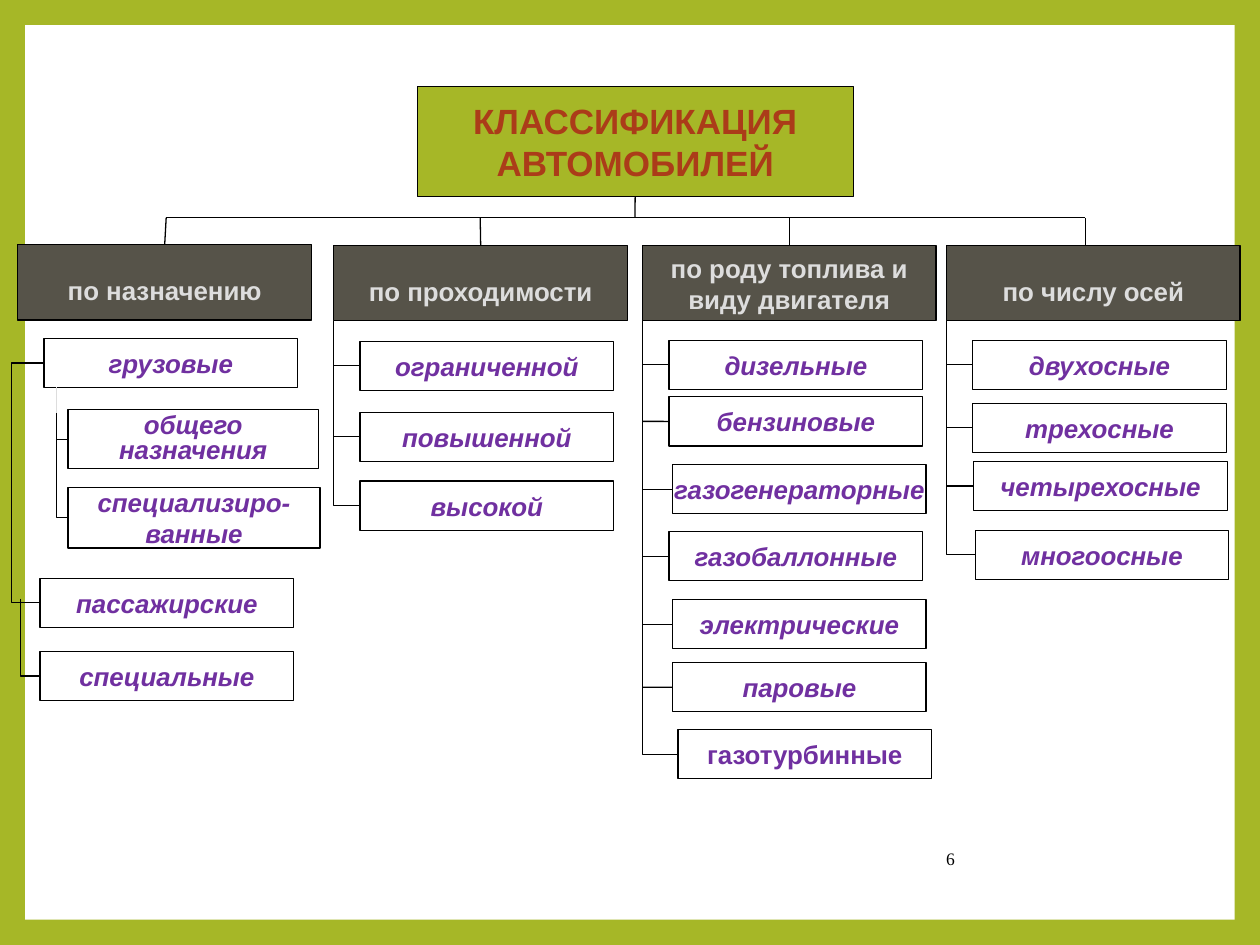
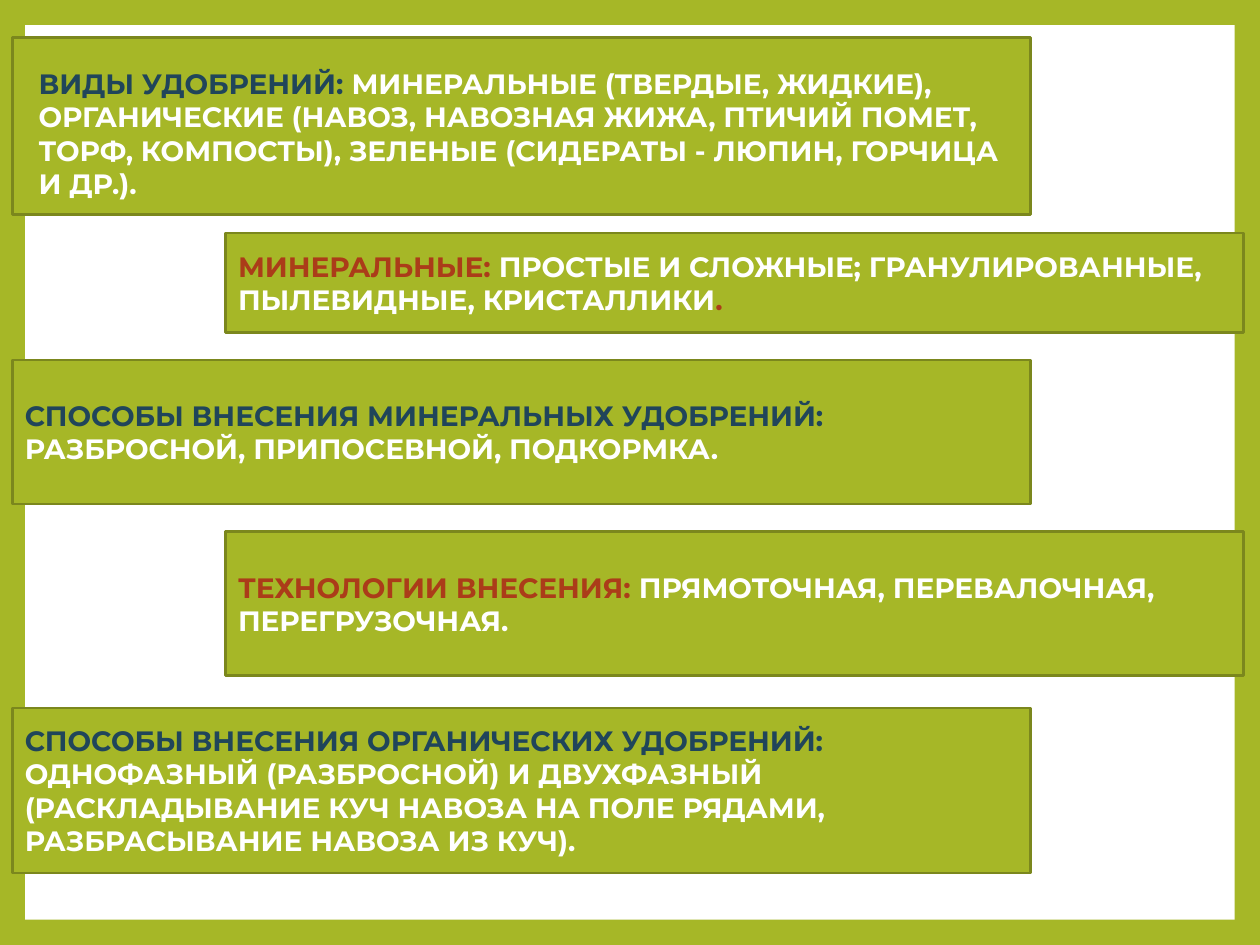
from dataclasses import dataclass
from typing import Optional

from lxml.etree import SubElement
from pptx import Presentation
from pptx.dml.color import RGBColor
from pptx.enum.shapes import MSO_CONNECTOR, MSO_SHAPE
from pptx.enum.text import MSO_ANCHOR, MSO_AUTO_SIZE, PP_ALIGN
from pptx.oxml.ns import qn
from pptx.util import Cm, Pt

COLORS = {
    "green": "A6B727",
    "olive": "7B871D",
    "white": "FFFFFF",
    "black": "000000",
    "rust": "AB3C19",
    "navy": "20455A",
    "purple": "7030A0",
    "gray": "565349",
    "light": "DDDDDD",
}
HEADING_WIDTH, HEADING_HEIGHT = 5.92, 1.52
ITEM_WIDTH, ITEM_HEIGHT = 5.11, 0.99
BUS_TOP = 4.39
BAND_WIDTH = 20.52
BAND_LEFT, BAND_RIGHT = 0.25, 4.55
INSET_SIDE, INSET_TOP = 0.25, 0.13


@dataclass(frozen=True)
class Item:
    text: str
    left: float
    top: float
    width: float = ITEM_WIDTH
    height: float = ITEM_HEIGHT
    italic: bool = True
    line_spacing: float = 1.0


@dataclass(frozen=True)
class Column:
    heading: str
    left: float
    top: float
    stem: float
    items: tuple[Item, ...]
    has_branches: bool = True
    inset_top: float = 0.3


@dataclass(frozen=True)
class Elbow:
    begin: tuple[float, float]
    end: tuple[float, float]
    turn: float


@dataclass(frozen=True)
class Band:
    left: float
    top: float
    height: float
    lead: str
    lead_color: str
    body: str
    tail: str = ""
    inset_left: float = INSET_SIDE
    inset_top: float = INSET_TOP


COLUMNS = (
    Column("по назначению", 0.36, 4.93, 3.35, (
        Item("грузовые", 0.89, 6.83),
        Item("общего назначения", 1.37, 8.26, 5.05, 1.19, line_spacing=0.8),
        Item("специализиро-ванные", 1.37, 9.83, 5.08, 1.22),
        Item("пассажирские", 0.81, 11.66),
        Item("специальные", 0.81, 13.13),
    ), has_branches=False),
    Column("по проходимости", 6.73, 4.95, 9.68, (
        Item("ограниченной", 7.26, 6.88),
        Item("повышенной", 7.26, 8.31),
        Item("высокой", 7.26, 9.7),
    )),
    Column("по роду топлива и виду двигателя", 12.95, 4.95, 15.91, (
        Item("дизельные", 13.49, 6.86),
        Item("бензиновые", 13.49, 8.0),
        Item("газогенераторные", 13.56, 9.37),
        Item("газобаллонные", 13.49, 10.72),
        Item("электрические", 13.56, 12.09),
        Item("паровые", 13.56, 13.36),
        Item("газотурбинные", 13.67, 14.71, italic=False),
    ), inset_top=0),
    Column("по числу осей", 19.08, 4.95, 21.88, (
        Item("двухосные", 19.61, 6.86),
        Item("трехосные", 19.61, 8.13),
        Item("четырехосные", 19.63, 9.3),
        Item("многоосные", 19.66, 10.69),
    )),
)
PURPOSE_ELBOWS = (
    Elbow((0.89, 7.32), (0.81, 12.14), 0.23),
    Elbow((0.41, 12.07), (0.81, 13.63), 0.41),
    Elbow((1.14, 8.79), (1.37, 10.44), 1.14),
    Elbow((1.14, 7.9), (1.37, 8.86), 1.14),
)
BANDS = (
    Band(BAND_LEFT, 0.76, 3.56, "ВИДЫ УДОБРЕНИЙ: ", "navy",
         "МИНЕРАЛЬНЫЕ (ТВЕРДЫЕ, ЖИДКИЕ), ОРГАНИЧЕСКИЕ (НАВОЗ, НАВОЗНАЯ ЖИЖА, "
         "ПТИЧИЙ ПОМЕТ, ТОРФ, КОМПОСТЫ), ЗЕЛЕНЫЕ (СИДЕРАТЫ - ЛЮПИН, ГОРЧИЦА И ДР.).",
         inset_left=0.53, inset_top=0.43),
    Band(BAND_RIGHT, 4.7, 2.01, "МИНЕРАЛЬНЫЕ: ", "rust",
         "ПРОСТЫЕ И СЛОЖНЫЕ; ГРАНУЛИРОВАННЫЕ, ПЫЛЕВИДНЫЕ, КРИСТАЛЛИКИ", "."),
    Band(BAND_LEFT, 7.26, 2.9, "СПОСОБЫ ВНЕСЕНИЯ МИНЕРАЛЬНЫХ УДОБРЕНИЙ: ", "navy",
         "РАЗБРОСНОЙ, ПРИПОСЕВНОЙ, ПОДКОРМКА."),
    Band(BAND_RIGHT, 10.72, 2.9, "ТЕХНОЛОГИИ ВНЕСЕНИЯ: ", "rust",
         "ПРЯМОТОЧНАЯ, ПЕРЕВАЛОЧНАЯ, ПЕРЕГРУЗОЧНАЯ."),
    Band(BAND_LEFT, 14.27, 3.33, "СПОСОБЫ ВНЕСЕНИЯ ОРГАНИЧЕСКИХ УДОБРЕНИЙ: ", "navy",
         "ОДНОФАЗНЫЙ (РАЗБРОСНОЙ) И ДВУХФАЗНЫЙ (РАСКЛАДЫВАНИЕ КУЧ НАВОЗА НА ПОЛЕ "
         "РЯДАМИ, РАЗБРАСЫВАНИЕ НАВОЗА ИЗ КУЧ)."),
)


def rgb(name: str) -> RGBColor:
    return RGBColor.from_string(COLORS[name])


def style_font(font, name: str, size: float, color: str, bold=True, italic=False) -> None:
    font.name, font.size, font.bold, font.italic = name, Pt(size), bold, italic
    font.color.rgb = rgb(color)


def style_box(shape, fill: Optional[str], line: Optional[str], line_width=0.75) -> None:
    if fill:
        shape.fill.solid()
        shape.fill.fore_color.rgb = rgb(fill)
    else:
        shape.fill.background()
    if line:
        shape.line.color.rgb = rgb(line)
        shape.line.width = Pt(line_width)
    else:
        shape.line.fill.background()


def add_box(slide, left, top, width, height, fill, line, line_width=0.75):
    shape = slide.shapes.add_shape(
        MSO_SHAPE.RECTANGLE, Cm(left), Cm(top), Cm(width), Cm(height))
    shape.shadow.inherit = False
    style_box(shape, fill, line, line_width)
    return shape


def set_frame(shape, left=0.0, top=0.0, right=0.0, bottom=0.0):
    frame = shape.text_frame
    frame.word_wrap = True
    frame.auto_size = MSO_AUTO_SIZE.NONE
    frame.vertical_anchor = MSO_ANCHOR.MIDDLE
    frame.margin_left, frame.margin_top = Cm(left), Cm(top)
    frame.margin_right, frame.margin_bottom = Cm(right), Cm(bottom)
    return frame


def set_label(shape, text, size, color, italic=False, inset_top=0.0):
    frame = set_frame(shape, top=inset_top)
    frame.text = text
    paragraph = frame.paragraphs[0]
    paragraph.alignment = PP_ALIGN.CENTER
    style_font(paragraph.runs[0].font, "Arial", size, color, italic=italic)
    return paragraph


def add_line(slide, begin, end, color="black", kind=MSO_CONNECTOR.STRAIGHT):
    connector = slide.shapes.add_connector(
        kind, Cm(begin[0]), Cm(begin[1]), Cm(end[0]), Cm(end[1]))
    connector.line.color.rgb = rgb(color)
    connector.line.width = Pt(0.75)
    SubElement(connector.element.spPr, qn("a:effectLst"))
    return connector


def add_elbow(slide, elbow: Elbow) -> None:
    connector = add_line(slide, elbow.begin, elbow.end, kind=MSO_CONNECTOR.ELBOW)
    # The vertical part stands at elbow.turn, given as a share of the width
    share = (elbow.turn - elbow.begin[0]) / (elbow.end[0] - elbow.begin[0])
    geometry = connector.element.spPr.find(qn("a:prstGeom"))
    guides = geometry.find(qn("a:avLst"))
    if guides is None:
        guides = SubElement(geometry, qn("a:avLst"))
    SubElement(guides, qn("a:gd"), name="adj1", fmla=f"val {round(share * 100000)}")


def set_master(presentation, slide) -> None:
    """Green frame and white panel shared by all slides."""
    master = presentation.slide_master
    master.background.fill.solid()
    master.background.fill.fore_color.rgb = rgb("green")
    panel = add_box(slide, 0.51, 0.51, 24.38, 18.03, "white", None)
    panel.element.nvSpPr.cNvPr.set("id", "100")
    master.shapes.element.insert(2, panel.element)


def add_column(slide, column: Column) -> None:
    heading = add_box(slide, column.left, column.top, HEADING_WIDTH, HEADING_HEIGHT,
                      "gray", "black")
    set_label(heading, column.heading, 14.8, "light", inset_top=column.inset_top)
    stem = add_line(slide, (column.stem, BUS_TOP), (column.stem, column.top))
    if abs(column.stem - column.left - HEADING_WIDTH / 2) < 0.1:
        stem.end_connect(heading, 0)

    for item in column.items:
        box = add_box(slide, item.left, item.top, item.width, item.height, None, "black")
        paragraph = set_label(box, item.text, 14.8, "purple", item.italic)
        paragraph.line_spacing = item.line_spacing
        if not column.has_branches:
            continue
        middle = item.top + item.height / 2
        if item is column.items[-1]:
            start = (column.left, column.top + HEADING_HEIGHT)
            add_elbow(slide, Elbow(start, (item.left, middle), column.left))
        else:
            branch = add_line(slide, (column.left, middle), (item.left, middle))
            branch.end_connect(box, 1)


def build_classification(slide) -> None:
    # Title
    title = slide.shapes.title
    title.left, title.top, title.width, title.height = Cm(8.41), Cm(1.75), Cm(8.79), Cm(2.21)
    style_box(title, "green", "black")
    set_label(title, "КЛАССИФИКАЦИЯ АВТОМОБИЛЕЙ", 20, "rust")

    # Tree
    for column in COLUMNS:
        add_column(slide, column)
    for elbow in PURPOSE_ELBOWS:
        add_elbow(slide, elbow)
    add_line(slide, (1.14, 8.33), (1.14, 7.8), "light")
    add_line(slide, (COLUMNS[0].stem, BUS_TOP), (COLUMNS[-1].stem, BUS_TOP))
    trunk = add_line(slide, (12.8, 3.96), (12.8, BUS_TOP))
    trunk.begin_connect(title, 2)

    # Slide number
    number = slide.shapes.add_textbox(Cm(18.08), Cm(16.79), Cm(1.42), Cm(1.02))
    frame = set_frame(number, INSET_SIDE, INSET_TOP, INSET_SIDE, INSET_TOP)
    frame.text = "6"
    frame.paragraphs[0].alignment = PP_ALIGN.RIGHT
    style_font(frame.paragraphs[0].runs[0].font, "Times New Roman", 10, "black", bold=False)


def add_band(slide, band: Band) -> None:
    shape = add_box(slide, band.left, band.top, BAND_WIDTH, band.height,
                    "green", "olive", 1.5)
    frame = set_frame(shape, band.inset_left, band.inset_top, INSET_SIDE, INSET_TOP)
    paragraph = frame.paragraphs[0]
    paragraph.alignment = PP_ALIGN.LEFT
    parts = ((band.lead, band.lead_color), (band.body, "white"), (band.tail, band.lead_color))
    for text, color in parts:
        if text:
            run = paragraph.add_run()
            run.text = text
            style_font(run.font, "Montserrat", 16, color)


def main() -> None:
    presentation = Presentation()
    presentation.slide_width, presentation.slide_height = Cm(25.4), Cm(19.05)
    title_only, blank = presentation.slide_layouts[5], presentation.slide_layouts[6]

    classification = presentation.slides.add_slide(title_only)
    set_master(presentation, classification)
    build_classification(classification)

    fertilizers = presentation.slides.add_slide(blank)
    for band in BANDS:
        add_band(fertilizers, band)

    presentation.save("out.pptx")


if __name__ == "__main__":
    main()
